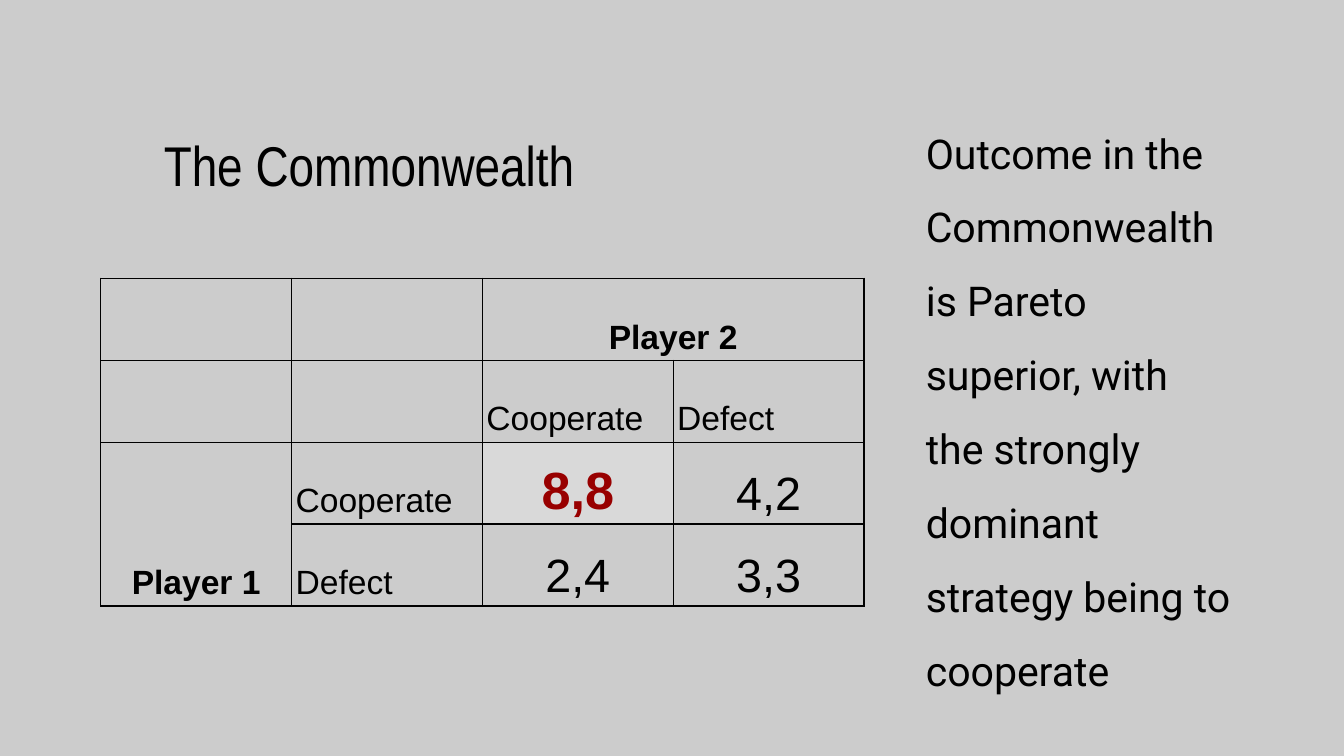
import pptx
import pptx.util
import pptx.dml.color
import pptx.enum.text
import pptx.oxml

Inches, Pt = pptx.util.Inches, pptx.util.Pt
Align, Anchor = pptx.enum.text.PP_ALIGN, pptx.enum.text.MSO_ANCHOR
RGB = pptx.dml.color.RGBColor.from_string
INK = {"back": "CCCCCC", "text": "000000", "best": "980000", "glow": "D9D9D9"}
NS = "http://schemas.openxmlformats.org/drawingml/2006/main"
COL, ROW = 1.42, 0.61


def write(frame, text, size, font="Arial", space=1.15, bold=False, color="text"):
    """Fill a text frame with one styled paragraph and return it."""
    frame.word_wrap = True
    para = frame.paragraphs[0]
    para.text = text
    para.line_spacing = space
    for run in para.runs:
        run.font.size, run.font.name, run.font.bold = Pt(size), font, bold
        run.font.color.rgb = RGB(INK[color])
    return para


def edge(cell):
    """Draw a thin line on all four sides of a cell."""
    props = cell._tc.get_or_add_tcPr()
    for side in ("lnL", "lnR", "lnT", "lnB"):
        props.append(pptx.oxml.parse_xml(
            f'<a:{side} xmlns:a="{NS}" w="{Pt(0.75)}"><a:solidFill>'
            f'<a:srgbClr val="{INK["text"]}"/></a:solidFill></a:{side}>'))


deck = pptx.Presentation()
deck.slide_width = Inches(10)
deck.slide_height = deck.slide_width * 9 // 16
slide = deck.slides.add_slide(deck.slide_layouts[6])
slide.background.fill.solid()
slide.background.fill.fore_color.rgb = RGB(INK["back"])

# Title and side note
texts = [
    ((1.12, 0.88, 9.15, 0.75), Anchor.MIDDLE, "The Commonwealth", 30, "Arial Narrow", 0.9),
    ((6.79, 0.67, 2.48, 3.84), Anchor.TOP,
     "Outcome in the Commonwealth is Pareto superior, with the strongly "
     "dominant strategy being to cooperate", 22, "Roboto", 1.5),
]
for place, anchor, text, size, font, space in texts:
    frame = slide.shapes.add_textbox(*map(Inches, place)).text_frame
    frame.margin_left = frame.margin_right = Inches(0.1)
    frame.margin_top = frame.margin_bottom = Inches(0.1)
    frame.vertical_anchor = anchor
    write(frame, text, size, font, space)

# Payoff table
rows = [
    ["", "", "Player 2", ""],
    ["", "", "Cooperate", "Defect"],
    ["Player 1", "Cooperate", "8,8", "4,2"],
    ["", "Defect", "2,4", "3,3"],
]
table = slide.shapes.add_table(
    4, 4, Inches(0.75), Inches(2.07), Inches(4 * COL), Inches(4 * ROW)).table
table.first_row = table.horz_banding = False
for col in table.columns:
    col.width = Inches(COL)
for row in table.rows:
    row.height = Inches(ROW)
table.cell(0, 2).merge(table.cell(0, 3))
table.cell(2, 0).merge(table.cell(3, 0))

for r, row in enumerate(rows):
    for c, text in enumerate(row):
        cell = table.cell(r, c)
        cell.margin_left = cell.margin_right = Inches(0.03)
        cell.margin_top = cell.margin_bottom = Inches(0.03)
        cell.vertical_anchor = Anchor.BOTTOM
        edge(cell)
        cell.fill.background()
        if not text:
            continue
        head = text.startswith("Player")
        score = "," in text
        best = text == "8,8"
        size = 28 if best else 25 if score else 18
        para = write(cell.text_frame, text, size, bold=head or best,
                     color="best" if best else "text")
        para.alignment = Align.CENTER if head or score else Align.LEFT
        if best:
            cell.fill.solid()
            cell.fill.fore_color.rgb = RGB(INK["glow"])

deck.save("out.pptx")
